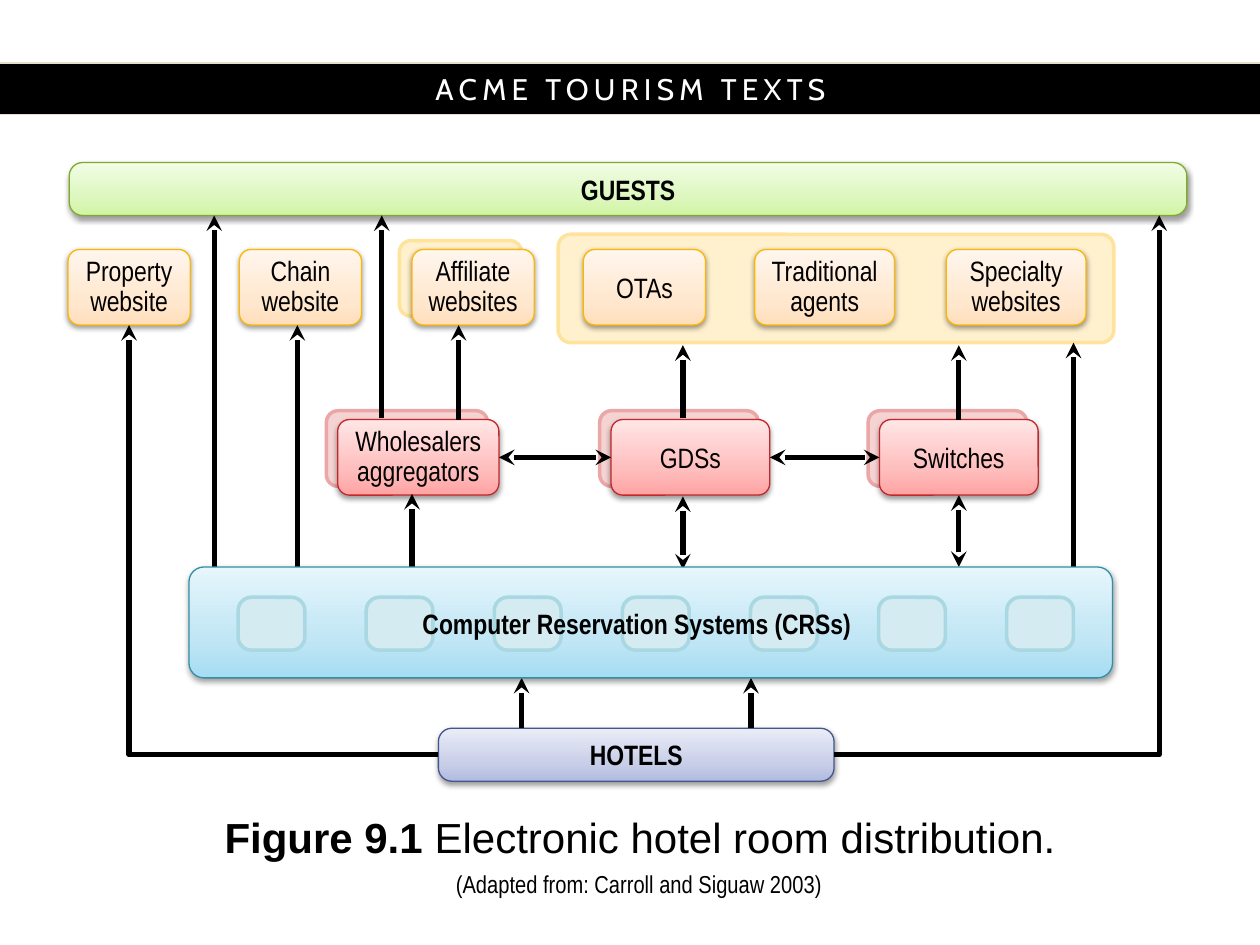
from copy import deepcopy

from lxml import etree
from pptx import Presentation, util as u
from pptx.dml.color import RGBColor
from pptx.enum import shapes, text
from pptx.oxml.ns import qn

# Content: gradient colours run from bottom to top
STYLES = {
    "guests": (["D0F5A3", "DDF7BF", "F2FDE6"], "82A92F"),
    "hotels": (["B2BBE0", "C9CFE8", "EAECF7"], "44578C"),
    "site": (["FFDFBC", "FFE8D0", "FFF6ED"], "FEB604"),
    "switch": (["FFA3A3", "FFBEBE", "FFE6E6"], "C22829"),
    "crs": (["A5DDF3", "C1E6F5", "E6F6FC"], "348FA6"),
    "site back": ("FFF1CE", "FFE39D"),
    "switch back": ("F5D3D3", "EBA7A8"),
    "system": ("D4EBF1", "A9D7E2"),
}
CORNERS = {0.42: 0.252, 0.6: 0.155, 0.86: 0.117, 0.88: 0.135}  # by height
BACKS = [
    ("switch back", 2.59, 3.26, 1.28, 0.6),
    ("switch back", 4.76, 3.26, 1.26, 0.6),
    ("switch back", 6.89, 3.26, 1.26, 0.6),
    ("site back", 4.43, 1.86, 4.41, 0.86),
    ("site back", 3.17, 1.91, 0.97, 0.6),
]
BARS = [
    ("HOTELS", "hotels", 3.48, 5.78, 3.14),
    ("GUESTS", "guests", 0.55, 1.29, 8.87),
]
SITE_TOP, SWITCH_TOP = 1.98, 3.33
BOXES = [
    ("Property\nwebsite", "site", 0.54, SITE_TOP, 0.97),
    ("Chain\nwebsite", "site", 1.9, SITE_TOP, 0.97),
    ("Affiliate\nwebsites", "site", 3.27, SITE_TOP, 0.97),
    ("OTAs", "site", 4.63, SITE_TOP, 0.97),
    ("Traditional agents", "site", 5.99, SITE_TOP, 1.11),
    ("Specialty websites", "site", 7.51, SITE_TOP, 1.11),
    ("Wholesalers\naggregators", "switch", 2.68, SWITCH_TOP, 1.28),
    ("GDSs", "switch", 4.85, SWITCH_TOP, 1.26),
    ("Switches", "switch", 6.98, SWITCH_TOP, 1.26),
]
# Vertical arrows: x, from y, to y, two-headed
ARROWS = [
    (4.14, 5.78, 5.38, False), (5.96, 5.78, 5.38, False),
    (5.42, 4.52, 3.94, True), (3.27, 4.5, 3.92, False),
    (8.52, 4.52, 2.72, False), (2.36, 4.52, 2.58, False),
    (5.42, 3.32, 2.74, False), (3.64, 3.33, 2.58, False),
    (3.03, 3.32, 1.71, False), (1.7, 4.5, 1.71, False),
]
TOP, LEFT, BOTTOM, RIGHT = range(4)
LABEL = {"size": u.Pt(16), "name": "Arial Narrow"}

prs = Presentation()
prs.slide_width, prs.slide_height = u.Inches(10), u.Inches(7.5)
slide = prs.slides.add_slide(prs.slide_layouts[6])


def rgb(value):
    return RGBColor.from_string(value)


def write(shape, runs, inset=None, align=text.PP_ALIGN.CENTER, spacing=None, color="000000"):
    frame = shape.text_frame
    frame.word_wrap = True
    frame.vertical_anchor = text.MSO_ANCHOR.MIDDLE
    if inset is not None:
        for side in ("left", "right", "top", "bottom"):
            setattr(frame, f"margin_{side}", u.Inches(inset))
    par = frame.paragraphs[0]
    par.alignment = align
    if spacing:
        par.line_spacing = spacing
    for words, style in runs:
        for number, line in enumerate(words.split("\n")):
            if number:
                par.add_line_break()
            run = par.add_run()
            run.text = line
            for key, value in style.items():
                setattr(run.font, key, value)
            run.font.color.rgb = rgb(color)
    for line_break in par._p.findall(qn("a:br")):
        line_break.append(deepcopy(par.runs[0].font._element))
    return frame


def panel(style, x, y, w, h):
    fill, line = STYLES[style]
    shape = slide.shapes.add_shape(shapes.MSO_SHAPE.ROUNDED_RECTANGLE, *map(u.Inches, (x, y, w, h)))
    shape.adjustments[0] = CORNERS[h]
    shape.shadow.inherit = False
    shape.line.color.rgb = rgb(line)
    if isinstance(fill, str):
        shape.fill.solid()
        shape.fill.fore_color.rgb = rgb(fill)
        shape.line.width = u.Pt(2)
        return shape
    shape.line.width = u.Pt(0.75)
    shape.fill.gradient()
    shape.fill.gradient_angle = 90
    properties = shape._element.spPr
    stops = properties.find(".//" + qn("a:gsLst"))
    stops.append(deepcopy(stops[0]))
    for stop, position, color in zip(shape.fill.gradient_stops, (0, 0.35, 1), fill):
        stop.position = position
        stop.color.rgb = rgb(color)
    # Soft shadow straight below
    shadow = etree.SubElement(properties.find(qn("a:effectLst")), qn("a:outerShdw"),
                              blurRad="40000", dist="20000", dir="5400000", rotWithShape="0")
    black = etree.SubElement(shadow, qn("a:srgbClr"), val="000000")
    etree.SubElement(black, qn("a:alpha"), val="38000")
    return shape


def arrow(x1, y1, x2, y2, both=False, bent=False, begin=None, end=None):
    kind = shapes.MSO_CONNECTOR.ELBOW if bent else shapes.MSO_CONNECTOR.STRAIGHT
    connector = slide.shapes.add_connector(kind, *map(u.Inches, (x1, y1, x2, y2)))
    if begin:
        connector.begin_connect(*begin)
    if end:
        connector.end_connect(*end)
    connector.line.color.rgb = rgb("000000")
    connector.line.width = u.Pt(3)
    properties = connector._element.spPr
    if bent:
        properties.find(qn("a:prstGeom")).set("prst", "bentConnector2")
    for tag in ("a:headEnd", "a:tailEnd") if both else ("a:tailEnd",):
        etree.SubElement(connector.line._get_or_add_ln(), qn(tag), type="stealth")
    etree.SubElement(properties, qn("a:effectLst"))


# Header band
band = slide.shapes.add_shape(shapes.MSO_SHAPE.RECTANGLE, *map(u.Inches, (-0.08, 0.5, 10.17, 0.41)))
band.shadow.inherit = False
band.fill.solid()
band.fill.fore_color.rgb = rgb("000000")
band.line.color.rgb = rgb("E7DEC9")
band.line.width = u.Pt(0.75)
header = write(band, [("ACME TOURISM TEXTS", {"size": u.Pt(17), "name": "Cabin"})], color="FFFFFF")
header.paragraphs[0].runs[0].font._element.set("spc", "300")

# Panels and labelled boxes
for back in BACKS:
    panel(*back)
part = {}
for label, style, x, y, w in BARS:
    part[label] = panel(style, x, y, w, 0.42)
    write(part[label], [(label, {**LABEL, "bold": True})])
for label, style, x, y, w in BOXES:
    name = label.split()[0]
    part[name] = panel(style, x, y, w, 0.6)
    two_lines = len(label.split()) > 1
    write(part[name], [(label, LABEL)], inset=0, spacing=0.9 if two_lines else None)

# Arrows
for x, start, stop, both in ARROWS:
    arrow(x, start, x, stop, both)
arrow(7.61, 4.5, 7.61, 3.93, both=True, end=(part["Switches"], BOTTOM))
arrow(7.61, 3.33, 7.61, 2.74, begin=(part["Switches"], TOP))
arrow(3.48, 5.99, 1.02, 2.58, bent=True,
      begin=(part["HOTELS"], LEFT), end=(part["Property"], BOTTOM))
arrow(6.62, 5.99, 9.2, 1.71, bent=True, begin=(part["HOTELS"], RIGHT))
for left, right in (("Wholesalers", "GDSs"), ("GDSs", "Switches")):
    arrow(0, 0, 1, 0, both=True, begin=(part[left], RIGHT), end=(part[right], LEFT))

# Reservation systems
panel("crs", 1.5, 4.5, 7.33, 0.88)
for column in range(7):
    panel("system", 1.89 + column * 6.1 / 6, 4.74, 0.53, 0.42)


def text_box(x, y, w, h, runs, **layout):
    return write(slide.shapes.add_textbox(*map(u.Inches, (x, y, w, h))), runs, **layout)


text_box(2.84, 4.74, 4.43, 0.42,
         [("Computer Reservation Systems (CRSs)", {**LABEL, "bold": True})])

# Caption and credit
caption = {"size": u.Pt(24), "name": "Arial"}
text_box(0.8, 6.38, 8.56, 0.48,
         [("Figure 9.1 ", {**caption, "bold": True}),
          ("Electronic hotel room distribution.", {**caption, "bold": False})],
         spacing=u.Pt(32))
credit = text_box(3.52, 6.84, 3.13, 0.34,
                  [("(Adapted from: Carroll and Siguaw 2003)", {**LABEL, "size": u.Pt(14)})],
                  align=text.PP_ALIGN.LEFT)
credit.word_wrap = False

prs.save("out.pptx")
